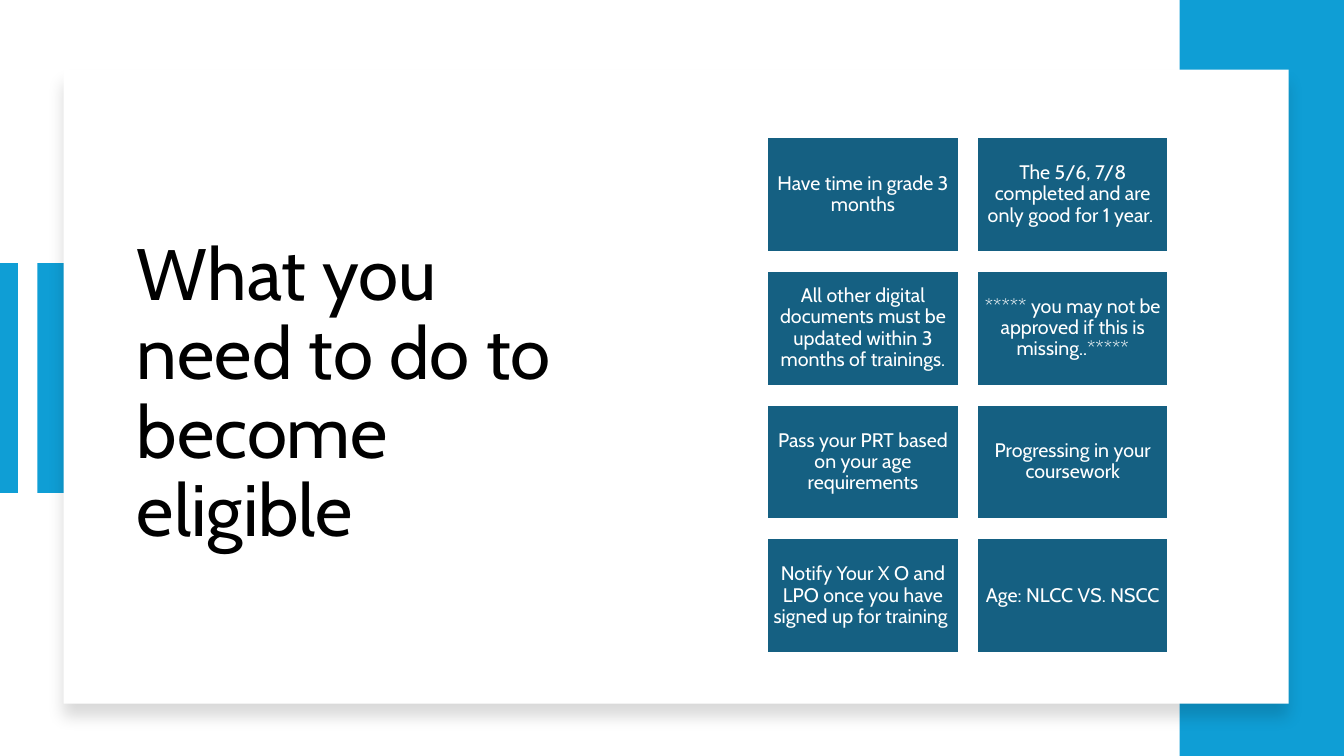
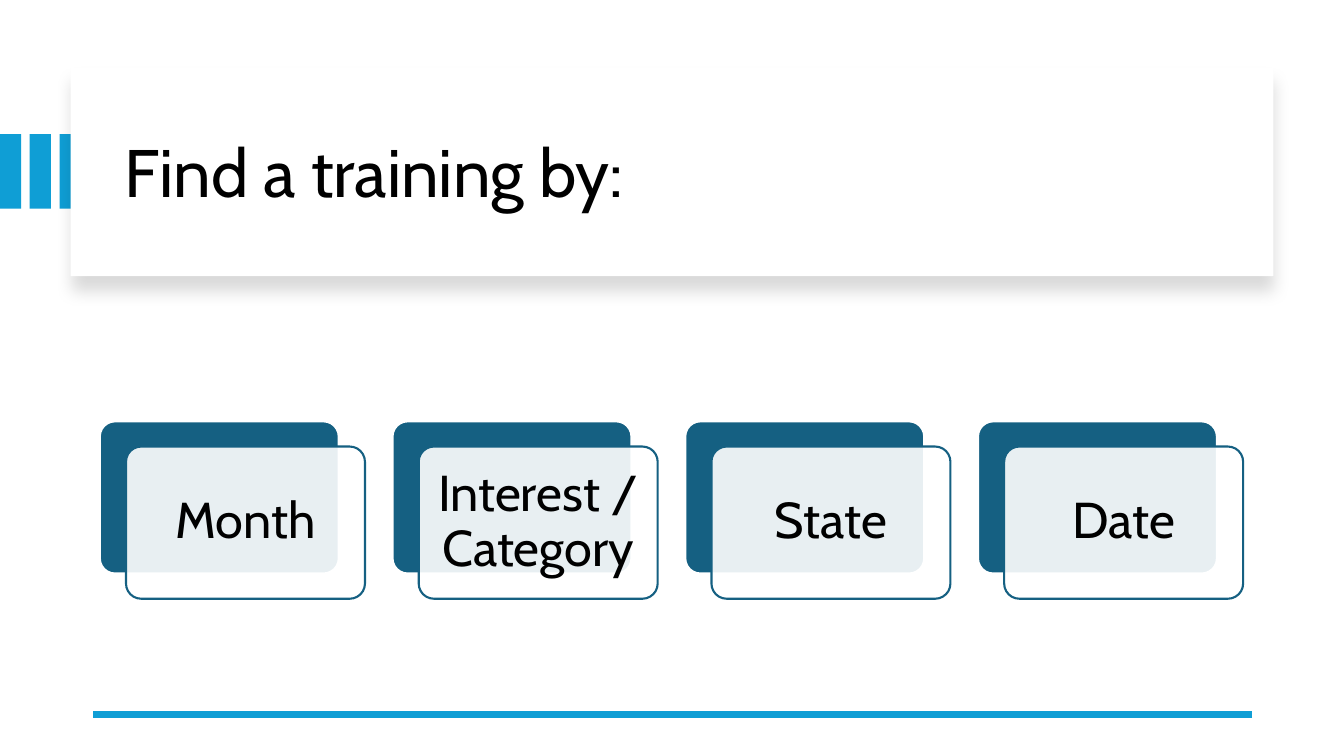
from collections import namedtuple

from lxml.etree import SubElement
from pptx import Presentation
from pptx.dml.color import RGBColor
from pptx.enum.shapes import MSO_CONNECTOR, MSO_SHAPE
from pptx.enum.text import MSO_ANCHOR, PP_ALIGN
from pptx.oxml.ns import qn
from pptx.util import Pt

# Shared look: 100 px to the inch
SCALE = 9144
PAGE_WIDTH, PAGE_HEIGHT = 1333, 750
FONT = "Cabin"
WHITE = RGBColor(0xFF, 0xFF, 0xFF)
BLACK = RGBColor(0x00, 0x00, 0x00)
BRIGHT_BLUE = RGBColor(0x0F, 0x9E, 0xD5)
DEEP_BLUE = RGBColor(0x15, 0x60, 0x82)
OUTLINE = 1.5
CORNER = 0.1

Box = namedtuple("Box", "left top width height")

REQUIREMENTS = [
    "Have time in grade 3 months",
    "The 5/6, 7/8 completed and are only good for 1 year. ",
    "All other digital documents must be updated within 3 months of trainings.",
    "***** you may not be approved if this is missing..*****",
    "Pass your PRT based on your age requirements",
    "Progressing in your coursework",
    "Notify Your X O and LPO once you have signed up for training ",
    "Age: NLCC VS. NSCC",
]
SEARCH_KEYS = ["Month", "Interest / Category", "State", "Date"]


def px(length):
    return round(length * SCALE)


def add_block(page, box, fill, line=None, kind=MSO_SHAPE.RECTANGLE):
    shape = page.shapes.add_shape(kind, *map(px, box))
    shape.shadow.inherit = False
    shape.fill.solid()
    shape.fill.fore_color.rgb = fill
    if line is None:
        shape.line.fill.background()
    else:
        shape.line.color.rgb = line
        shape.line.width = Pt(OUTLINE)
    if kind == MSO_SHAPE.ROUNDED_RECTANGLE:
        shape.adjustments[0] = CORNER
    return shape


def add_line(page, start, end, width):
    line = page.shapes.add_connector(
        MSO_CONNECTOR.STRAIGHT, *map(px, (*start, *end)))
    line.line.color.rgb = BRIGHT_BLUE
    line.line.width = Pt(width)
    SubElement(line._element.spPr, qn("a:effectLst"))


def set_text(shape, text, size, color, align, inset):
    frame = shape.text_frame
    frame.word_wrap = True
    frame.vertical_anchor = MSO_ANCHOR.MIDDLE
    frame.margin_left = frame.margin_right = px(inset[0])
    frame.margin_top = frame.margin_bottom = px(inset[1])
    frame.text = text
    para = frame.paragraphs[0]
    para.alignment = align
    para.line_spacing = 0.9
    para.font.name = FONT
    para.font.size = Pt(size)
    para.font.color.rgb = color


def add_title(page, box, text, size):
    title = page.shapes.add_textbox(*map(px, box))
    set_text(title, text, size, BLACK, PP_ALIGN.LEFT, (10, 5))


def add_panel(page, box):
    """White panel with a soft shadow below it."""
    panel = add_block(page, box, WHITE)
    effects = panel._element.spPr.find(qn("a:effectLst"))
    shadow = SubElement(
        effects, qn("a:outerShdw"), blurRad=str(Pt(11)), dist=str(Pt(10)),
        dir="5400000", algn="t", rotWithShape="0")
    color = SubElement(shadow, qn("a:srgbClr"), val=str(BLACK))
    SubElement(color, qn("a:alpha"), val="15000")


def add_requirement_grid(page, box, columns=2, tile_width=190, tile_height=114):
    rows = len(REQUIREMENTS) // columns
    step_x = (box.width - tile_width) / (columns - 1)
    step_y = (box.height - tile_height) / (rows - 1)
    for index, text in enumerate(REQUIREMENTS):
        row, column = divmod(index, columns)
        tile_box = Box(box.left + column * step_x, box.top + row * step_y,
                       tile_width, tile_height)
        tile = add_block(page, tile_box, DEEP_BLUE, WHITE)
        set_text(tile, text, 14, WHITE, PP_ALIGN.CENTER, (6, 6))


def add_card_row(page, box, card_width=237, card_height=151):
    shift_x, shift_y = box.width % card_width, box.height - card_height
    shift_x = 26
    step = (box.width - shift_x - card_width) / (len(SEARCH_KEYS) - 1)
    rounded = MSO_SHAPE.ROUNDED_RECTANGLE
    for index, text in enumerate(SEARCH_KEYS):
        back = Box(box.left + index * step, box.top, card_width, card_height)
        front = back._replace(left=back.left + shift_x, top=back.top + shift_y)
        add_block(page, back, DEEP_BLUE, WHITE, rounded)
        card = add_block(page, front, WHITE, DEEP_BLUE, rounded)
        # Let the back card show faintly through the front one
        fill = card._element.spPr.find(qn("a:solidFill"))
        SubElement(fill[0], qn("a:alpha"), val="90000")
        set_text(card, text, 36, BLACK, PP_ALIGN.CENTER, (14, 14))


def add_side_bars(page, box, count=3, bar_width=21):
    step = (box.width - bar_width) / (count - 1)
    for index in range(count):
        bar = box._replace(left=box.left + index * step, width=bar_width)
        add_block(page, bar, BRIGHT_BLUE)


def build_eligibility(page):
    # Accents behind the panel
    add_block(page, Box(37, 261, 34, 228), BRIGHT_BLUE)
    add_line(page, (8, 261), (8, 489), 14)
    add_block(page, Box(1170, 0, PAGE_WIDTH - 1170, PAGE_HEIGHT), BRIGHT_BLUE)
    # Panel content
    add_panel(page, Box(63, 69, 1215, 629))
    add_title(page, Box(126, 136, 438, 512),
              "What you need to do to become eligible", 52)
    add_requirement_grid(page, Box(761, 136, 398, 512))


def build_search(page):
    # Header
    add_side_bars(page, Box(0, 133, 80, 74))
    add_panel(page, Box(70, 67, 1193, 207))
    add_title(page, Box(114, 89, 1113, 170), "Find a training by:", 48)
    # Footer rule and cards
    add_line(page, (1242, 709), (92, 709), 4.5)
    add_card_row(page, Box(99, 418, 1134, 176))


def main():
    deck = Presentation()
    deck.slide_width, deck.slide_height = px(PAGE_WIDTH), px(PAGE_HEIGHT)
    for build in (build_eligibility, build_search):
        build(deck.slides.add_slide(deck.slide_layouts[6]))
    deck.save("out.pptx")


if __name__ == "__main__":
    main()
